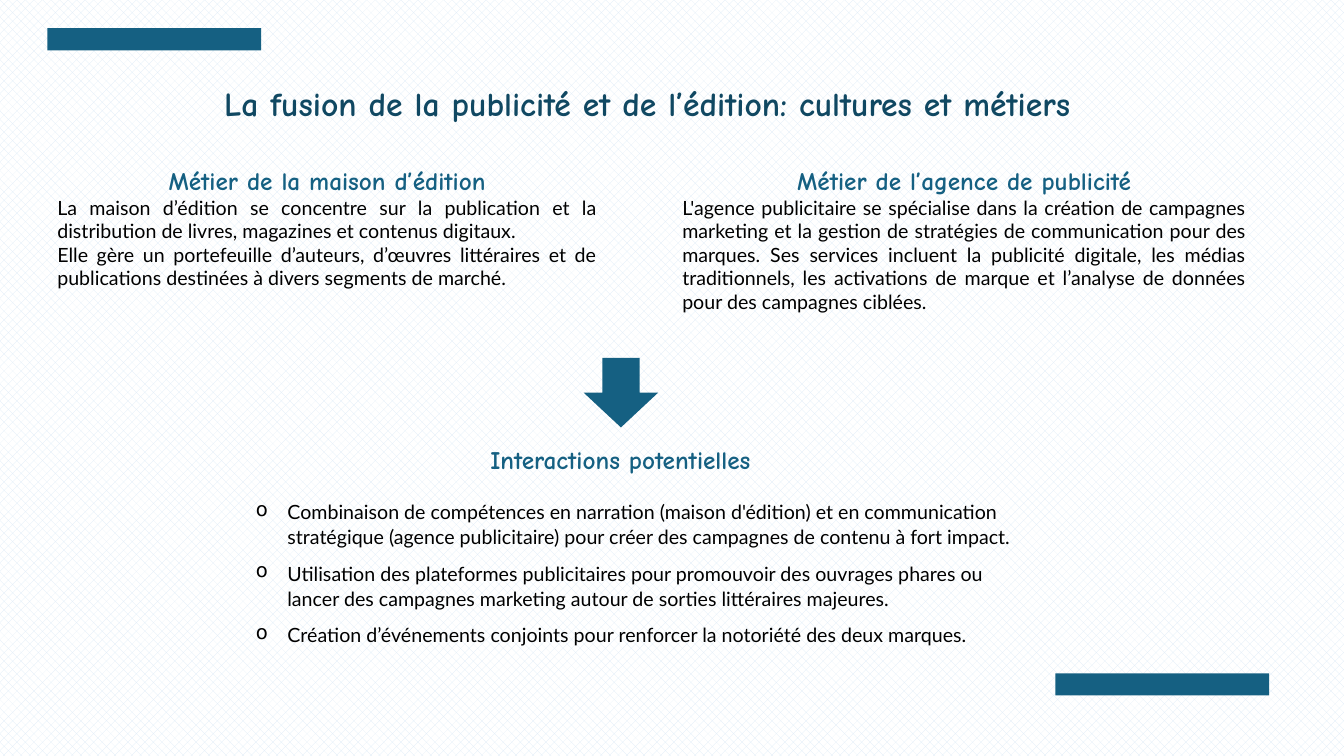
from lxml import etree
from pptx import Presentation
from pptx.dml.color import RGBColor
from pptx.enum import dml, shapes, text
from pptx.oxml.ns import qn
from pptx.util import Pt

COLORS = {"title": "104862", "teal": "156082", "body": "000000",
          "weave": "DCEAF7", "paper": "FFFFFF"}
HEAD, BODY = "Comic Neue", "Lato"
TITLE = "La fusion de la publicité et de l’édition: cultures et métiers"
TRADES = [
    ("Métier de la maison d’édition", (33.84, 114.48, 399.6, 111.6), [
        "La maison d’édition se concentre sur la publication et la distribution de livres, magazines et contenus digitaux.",
        "Elle gère un portefeuille d’auteurs, d’œuvres littéraires et de publications destinées à divers segments de marché.",
    ]),
    ("Métier de l’agence de publicité", (480.24, 114.48, 416.88, 128.16), [
        "L'agence publicitaire se spécialise dans la création de campagnes marketing et la gestion de stratégies de communication pour des marques. Ses services incluent la publicité digitale, les médias traditionnels, les activations de marque et l’analyse de données pour des campagnes ciblées.",
    ]),
]
LINKS = ("Interactions potentielles", (139.68, 313.92, 606.96, 175.68), [
    "Combinaison de compétences en narration (maison d'édition) et en communication stratégique (agence publicitaire) pour créer des campagnes de contenu à fort impact.",
    "Utilisation des plateformes publicitaires pour promouvoir des ouvrages phares ou lancer des campagnes marketing autour de sorties littéraires majeures.",
    "Création d’événements conjoints pour renforcer la notoriété des deux marques.",
])
RECT, DOWN = shapes.MSO_SHAPE.RECTANGLE, shapes.MSO_SHAPE.DOWN_ARROW
MARKS = [
    (RECT, (33.84, 20.16, 152.64, 15.84)),
    (RECT, (753.84, 480.96, 152.64, 15.84)),
    (DOWN, (416.88, 255.6, 53.28, 49.68)),
]
ALIGN = text.PP_ALIGN


def rgb(name):
    return RGBColor.from_string(COLORS[name])


def add_box(slide, area):
    frame = slide.shapes.add_textbox(*map(Pt, area)).text_frame
    frame.word_wrap = True
    return frame


def write(par, words, align, font, size, color, bold=False):
    par.text = words
    par.alignment = align
    face = par.runs[0].font
    face.name, face.size, face.bold = font, Pt(size), bold
    face.color.rgb = rgb(color)


def add_block(slide, head, area, lines, align):
    """Add a heading with its body lines; return the heading and the body."""
    frame = add_box(slide, area)
    write(frame.paragraphs[0], head, ALIGN.CENTER, HEAD, 18, "teal", True)
    pars = []
    for line in lines:
        par = frame.add_paragraph()
        write(par, line, align, BODY, 14, "body")
        pars.append(par)
    return frame.paragraphs[0], pars


def set_bullet(par):
    par.line_spacing, par.space_after = 1.07, Pt(8)
    props = par._p.get_or_add_pPr()
    props.set("marL", str(Pt(58.5)))
    props.set("indent", str(Pt(-22.5)))
    etree.SubElement(props, qn("a:buChar")).set("char", "o")


def main():
    deck = Presentation()
    deck.slide_width, deck.slide_height = Pt(960), Pt(540)
    slide = deck.slides.add_slide(deck.slide_layouts[6])
    back = slide.background.fill
    back.patterned()
    back.pattern = dml.MSO_PATTERN.from_xml("pct40")
    back.fore_color.rgb, back.back_color.rgb = rgb("weave"), rgb("paper")

    frame = add_box(slide, (33.84, 52.56, 856.8, 42.48))
    frame.vertical_anchor = text.MSO_ANCHOR.MIDDLE
    write(frame.paragraphs[0], TITLE, ALIGN.CENTER, HEAD, 24, "title", True)

    for kind, area in MARKS:
        mark = slide.shapes.add_shape(kind, *map(Pt, area))
        mark.shadow.inherit = False
        mark.fill.solid()
        mark.fill.fore_color.rgb = rgb("teal")
        mark.line.fill.background()

    for trade in TRADES:
        add_block(slide, *trade, ALIGN.JUSTIFY)
    head, pars = add_block(slide, *LINKS, ALIGN.LEFT)
    head.space_after = Pt(17)
    for par in pars:
        set_bullet(par)
    deck.save("out.pptx")


if __name__ == "__main__":
    main()
